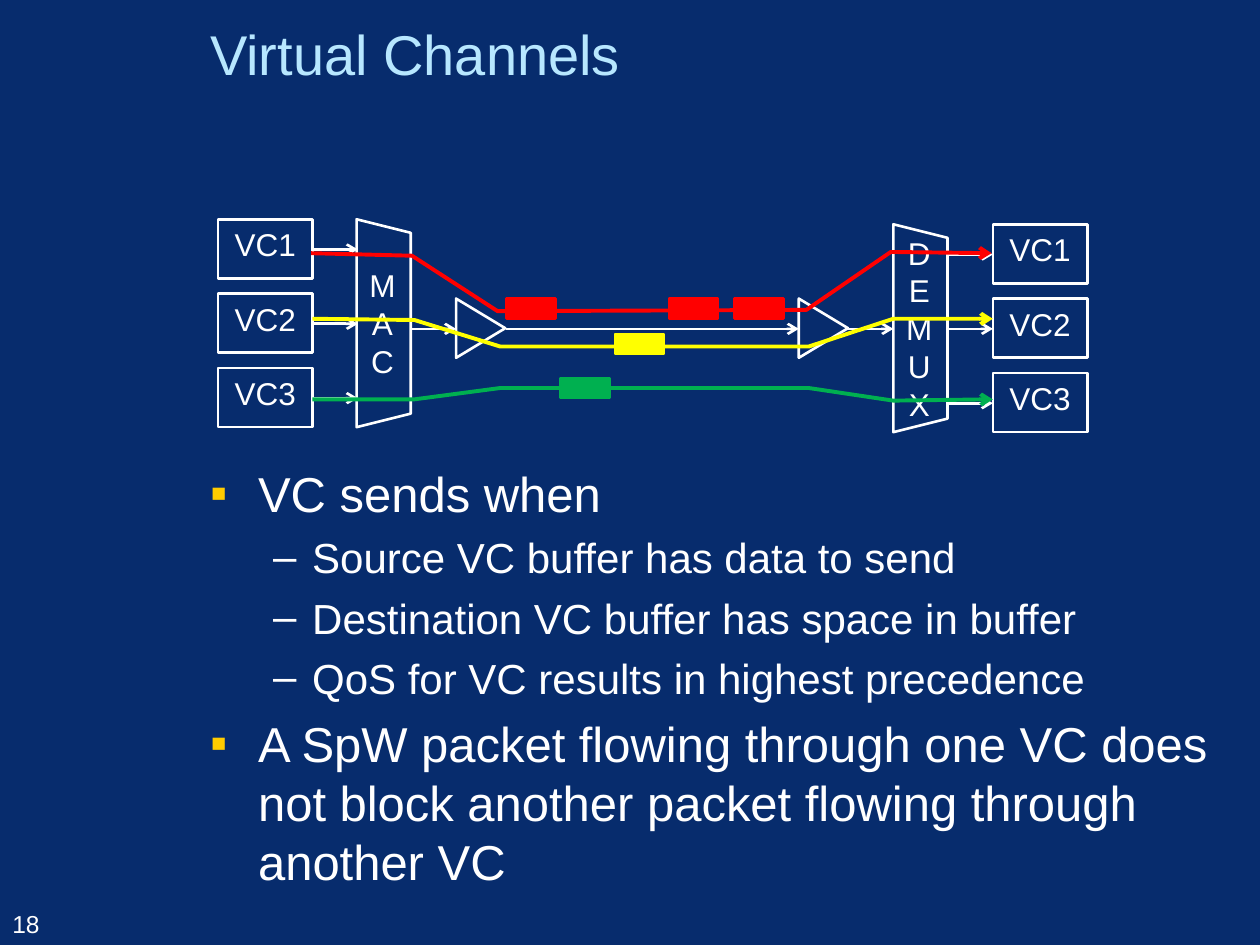
from pptx import Presentation
from pptx.dml.color import RGBColor
from pptx.enum.shapes import MSO_CONNECTOR as Conn, MSO_SHAPE as Kind
from pptx.enum.text import MSO_ANCHOR as Anchor, PP_ALIGN as Align
from pptx.oxml.ns import qn
from pptx.util import Inches, Pt
from lxml.etree import SubElement

NAVY = RGBColor(0x07, 0x2C, 0x6D)
WHITE = RGBColor(0xFF, 0xFF, 0xFF)
SKY = RGBColor(0xB7, 0xE7, 0xFF)
RED = RGBColor(0xFF, 0x00, 0x00)
YELLOW = RGBColor(0xFF, 0xFF, 0x00)
GREEN = RGBColor(0x00, 0xB0, 0x50)
GOLD = RGBColor(0xFF, 0xCC, 0x00)


class Board:
    font = "Arial"
    thin, thick = Pt(1.5), Pt(2.25)

    def __init__(self, slide):
        self.slide = slide
        self.shapes = slide.shapes
        fill = slide.background.fill
        fill.solid()
        fill.fore_color.rgb = NAVY

    def style(self, para, size, color=WHITE):
        para.font.name = self.font
        para.font.size = Pt(size)
        para.font.color.rgb = color

    def arrow(self, shape, color, width):
        """Style the line of a shape and put an open arrowhead at its end."""
        shape.line.color.rgb = color
        shape.line.width = width
        line = shape.line._get_or_add_ln()
        SubElement(line, qn("a:tailEnd"), type="arrow")

    def text(self, box, anchor):
        frame = self.shapes.add_textbox(*map(Inches, box)).text_frame
        frame.word_wrap = True
        frame.vertical_anchor = anchor
        return frame

    def label(self, box, words, size, color, anchor):
        para = self.text(box, anchor).paragraphs[0]
        para.text = words
        self.style(para, size, color)

    def bullets(self, box, items):
        frame = self.text(box, Anchor.TOP)
        for i, (level, words) in enumerate(items):
            para = frame.add_paragraph() if i else frame.paragraphs[0]
            para.text = words
            para.level = level
            size, left, hang, mark, color = (
                (24, 0.81, 0.31, "–", WHITE) if level
                else (28, 0.38, 0.38, "▪", GOLD))
            self.style(para, size)
            para.space_before = Pt(round(size * 0.23, 1))
            props = para._p.get_or_add_pPr()
            props.set("marL", str(Inches(left)))
            props.set("indent", str(-Inches(hang)))
            tint = SubElement(props, qn("a:buClr"))
            SubElement(tint, qn("a:srgbClr"), val=str(color))
            SubElement(props, qn("a:buFont"), typeface=self.font)
            SubElement(props, qn("a:buChar"), char=mark)
            # Bullet marks must precede the default run properties
            base = props.find(qn("a:defRPr"))
            if base is not None:
                props.append(base)

    def block(self, kind, box, words="", turn=0, fill=None):
        shape = self.shapes.add_shape(kind, *map(Inches, box))
        shape.shadow.inherit = False
        shape.rotation = turn
        if fill is None:
            shape.fill.background()
        else:
            shape.fill.solid()
            shape.fill.fore_color.rgb = fill
        shape.line.color.rgb = WHITE if fill is None else fill
        shape.line.width = self.thin
        if words:
            frame = shape.text_frame
            frame.word_wrap = True
            frame.vertical_anchor = Anchor.MIDDLE if turn else Anchor.TOP
            if turn:
                frame._txBody.bodyPr.set("vert", "vert270")
            para = frame.paragraphs[0]
            para.text = words
            para.alignment = Align.CENTER
            self.style(para, 18)

    def wire(self, start, end, y):
        line = self.shapes.add_connector(
            Conn.STRAIGHT, *map(Inches, (start, y, end, y)))
        self.arrow(line, WHITE, self.thin)
        SubElement(line._element.spPr, qn("a:effectLst"))

    def flow(self, points, color):
        first, *rest = [(Inches(x), Inches(y)) for x, y in points]
        pen = self.shapes.build_freeform(*first)
        pen.add_line_segments(rest, close=False)
        shape = pen.convert_to_shape()
        shape.shadow.inherit = False
        shape.fill.background()
        self.arrow(shape, color, self.thick)


def main():
    deck = Presentation()
    deck.slide_width, deck.slide_height = Inches(10), Inches(7.5)
    board = Board(deck.slides.add_slide(deck.slide_layouts[6]))

    board.label((1.57, 0, 8.43, 0.84), "Virtual Channels", 32, SKY,
                Anchor.MIDDLE)
    board.bullets((1.57, 3.63, 8.43, 3.87), [
        (0, "VC sends when"),
        (1, "Source VC buffer has data to send"),
        (1, "Destination VC buffer has space in buffer"),
        (1, "QoS for VC results in highest precedence"),
        (0, "A SpW packet flowing through one VC does not block "
            "another packet flowing through another VC"),
    ])
    board.label((0, 6.98, 1.06, 0.52), "18", 14, WHITE, Anchor.BOTTOM)

    # Each end: buffer left, top, wire start and end, mux left, top, name
    ends = [(1.73, 1.74, 2.48, 2.84, 2.22, 2.35, "MAC"),
            (7.88, 1.78, 7.52, 7.88, 6.48, 2.39, "DEMUX")]
    for left, top, start, end, x, y, name in ends:
        for i in range(3):
            row = top + 0.59 * i
            board.block(Kind.RECTANGLE, (left, row, 0.75, 0.47), f"VC{i + 1}")
            board.wire(start, end, row + 0.24)
        board.block(Kind.TRAPEZOID, (x, y, 1.65, 0.43), name, turn=90)

    for x in (3.58, 6.3):
        board.block(Kind.ISOSCELES_TRIANGLE, (x, 2.41, 0.47, 0.39), turn=90)
    for start, end in ((3.27, 3.62), (4.02, 6.34), (6.73, 7.09)):
        board.wire(start, end, 2.61)

    # Each channel: colour, path, packet top, packet lefts
    channels = [
        (RED, [(2.47, 2.01), (3.27, 2.03), (3.95, 2.47), (6.4, 2.46),
               (7.07, 2), (7.87, 2.01)], 2.37, (4.02, 5.31, 5.83)),
        (GREEN, [(2.48, 3.17), (3.29, 3.17), (3.97, 3.08), (6.42, 3.08),
                 (7.09, 3.18), (7.88, 3.17)], 3, (4.45,)),
        (YELLOW, [(2.48, 2.53), (3.29, 2.54), (3.97, 2.75), (6.42, 2.75),
                  (7.09, 2.53), (7.88, 2.53)], 2.65, (4.88,)),
    ]
    for color, points, top, lefts in channels:
        board.flow(points, color)
        for left in lefts:
            board.block(Kind.RECTANGLE, (left, top, 0.39, 0.16), fill=color)

    deck.save("out.pptx")


if __name__ == "__main__":
    main()
